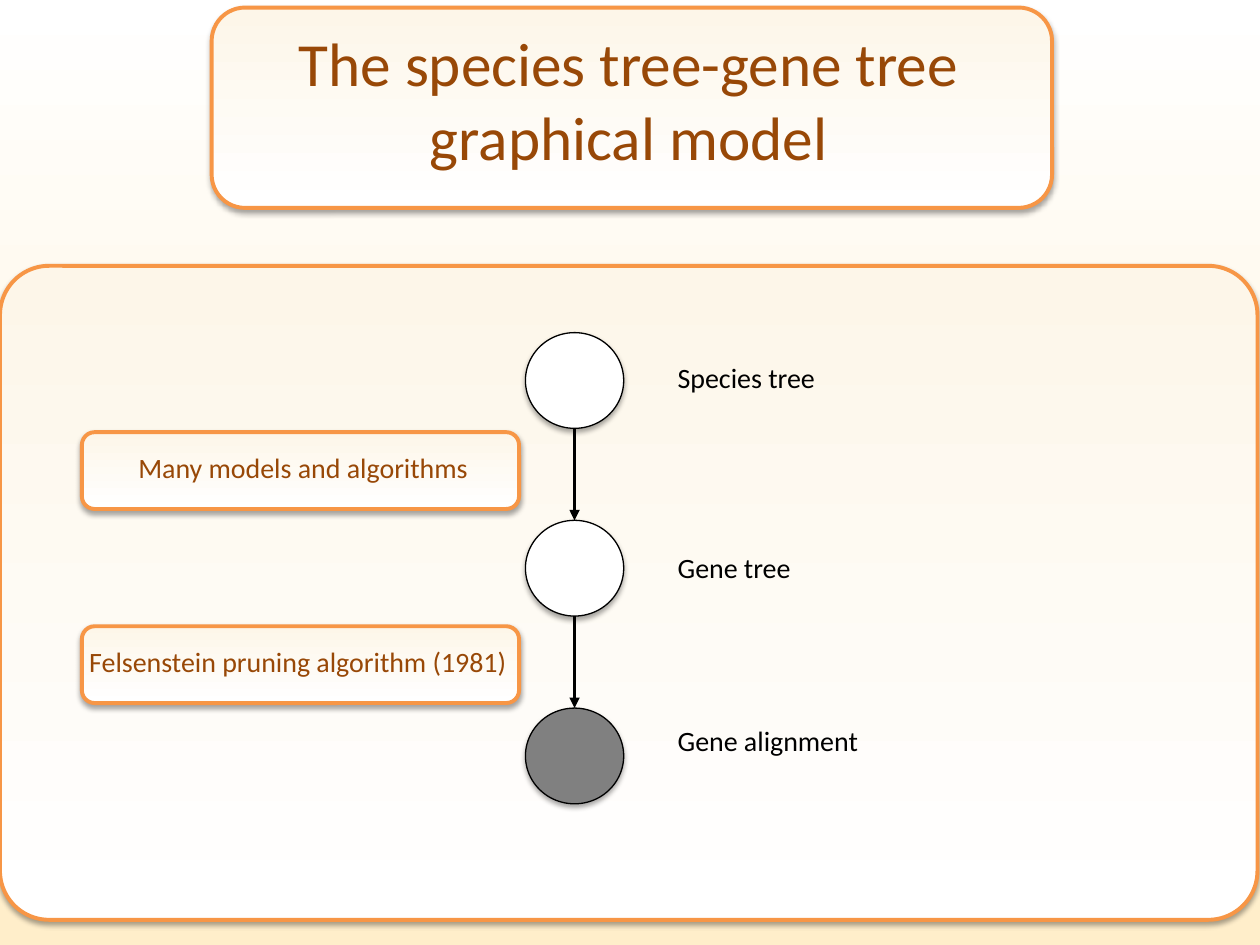
"""Build the species tree-gene tree graphical model slide on a 100 by 75 grid."""
from lxml import etree
from pptx import Presentation, util as u
from pptx.dml.color import RGBColor
from pptx.enum import shapes, text
from pptx.oxml import ns

WHITE = RGBColor(0xFF, 0xFF, 0xFF)
BLACK = RGBColor(0x00, 0x00, 0x00)
GRAY = RGBColor(0x80, 0x80, 0x80)
CREAM = RGBColor(0xFD, 0xF6, 0xE9)
SAND = RGBColor(0xFF, 0xEE, 0xCA)
ORANGE = RGBColor(0xF7, 0x96, 0x46)
BROWN = RGBColor(0x98, 0x48, 0x07)

deck = Presentation()
deck.slide_width, deck.slide_height = u.Inches(10), u.Inches(7.5)
cell = deck.slide_width // 100
slide = deck.slides.add_slide(deck.slide_layouts[6])
KIND = shapes.MSO_SHAPE


def draw(kind, spot, fills, edge, width):
    """Add a shape with a solid or rising gradient fill and a soft shadow."""
    shape = slide.shapes.add_shape(kind, *[round(n * cell) for n in spot])
    if len(fills) == 1:
        shape.fill.solid()
        shape.fill.fore_color.rgb = fills[0]
    else:
        shape.fill.gradient()
        shape.fill.gradient_angle = 90
        for stop, tint in zip(shape.fill.gradient_stops, fills):
            stop.color.rgb = tint
    shape.line.color.rgb = edge
    shape.line.width = u.Pt(width)
    shape.shadow.inherit = False
    glow = shape._element.spPr.find(ns.qn("a:effectLst"))
    cast = etree.SubElement(glow, ns.qn("a:outerShdw"), blurRad=str(u.Pt(3.1)),
                            dist=str(u.Pt(1.8)), dir="5400000", rotWithShape="0")
    tone = etree.SubElement(cast, ns.qn("a:srgbClr"), val="000000")
    etree.SubElement(tone, ns.qn("a:alpha"), val="35000")
    return shape


def write(words, spot, size, tint, wrap=True):
    """Add a text box holding one run."""
    box = slide.shapes.add_textbox(*[round(n * cell) for n in spot])
    box.text_frame.word_wrap = wrap
    run = box.text_frame.paragraphs[0].add_run()
    run.text = words
    run.font.name, run.font.size = "Calibri", u.Pt(size)
    run.font.color.rgb = tint
    return box.text_frame


back = slide.background.fill
back.gradient()
back.gradient_angle = 270
for stop, tint in zip(back.gradient_stops, (WHITE, SAND)):
    stop.color.rgb = tint

draw(KIND.ROUNDED_RECTANGLE, (16.8, 0.6, 66.7, 15.9), (WHITE, CREAM), ORANGE, 2.25)
title = write("The species tree-gene tree graphical model", (14, 2.3, 71.8, 11.1), 35, BROWN)
title.vertical_anchor = text.MSO_ANCHOR.MIDDLE
title.paragraphs[0].alignment = text.PP_ALIGN.CENTER
panel = draw(KIND.ROUNDED_RECTANGLE, (0, 21.1, 99.8, 51.9), (WHITE, CREAM), ORANGE, 2.25)
panel.adjustments[0] = 0.075

left, top, wide, high, step = 41.7, 26.4, 7.8, 7.6, 14.9
nodes = (("Species tree", WHITE, 28.1), ("Gene tree", WHITE, 43.2),
         ("Gene alignment", GRAY, 56.9))
for row, (name, tint, line) in enumerate(nodes):
    draw(KIND.OVAL, (left, top + row * step, wide, high), (tint,), BLACK, 0.75)
    write(name, (52.8, line, 27.5, 3.7), 16, BLACK)

mid = round((left + wide / 2) * cell)
for row in range(len(nodes) - 1):
    start, end = top + row * step + high, top + (row + 1) * step
    arrow = slide.shapes.add_connector(shapes.MSO_CONNECTOR.STRAIGHT, mid,
                                       round(start * cell), mid, round(end * cell))
    arrow.line.color.rgb = BLACK
    arrow.line.width = u.Pt(2)
    etree.SubElement(arrow.line._get_or_add_ln(), ns.qn("a:tailEnd"), type="triangle")
    etree.SubElement(arrow._element.spPr, ns.qn("a:effectLst"))

notes = (("Many models and algorithms", 34.3, 10, 28.5),
         ("Felsenstein pruning algorithm (1981)", 49.7, 6.1, 35.5))
for words, y, x, span in notes:
    draw(KIND.ROUNDED_RECTANGLE, (6.5, y, 34.7, 6.1), (WHITE, CREAM), ORANGE, 2.25)
    write(words, (x, y + 1, span, 3.7), 16, BROWN, wrap=False)

deck.save("out.pptx")
